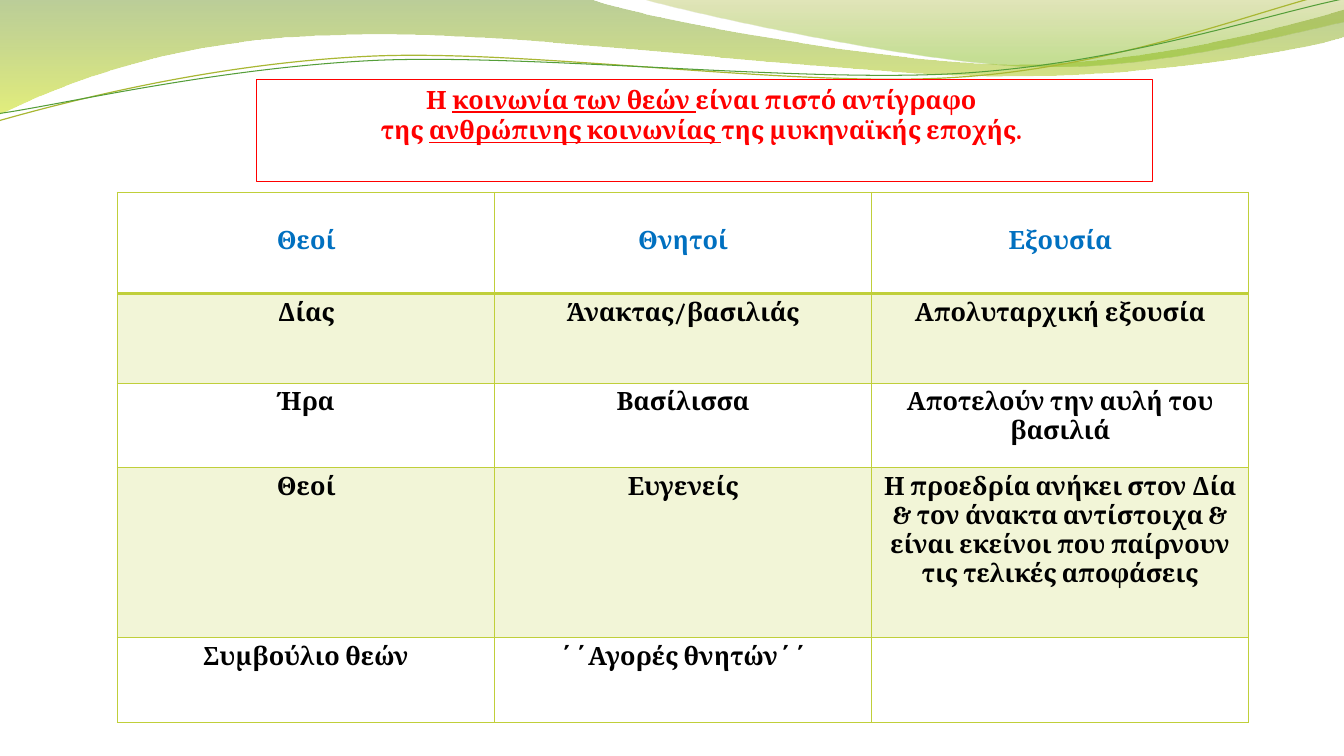
from dataclasses import dataclass
from typing import Optional

from lxml import etree
from pptx import Presentation
from pptx.dml.color import RGBColor
from pptx.enum.shapes import MSO_SHAPE
from pptx.enum.text import MSO_ANCHOR, PP_ALIGN
from pptx.oxml.ns import qn
from pptx.util import Pt

RECT = MSO_SHAPE.RECTANGLE
TOP = MSO_ANCHOR.TOP
CENTER = PP_ALIGN.CENTER
BLANK_LAYOUT = 6
WAVE_SHIFT = 0.5


@dataclass(frozen=True)
class Theme:
    font: str = "Cambria"
    size: float = 18
    title: str = "FF0000"
    header: str = "0070C0"
    body: str = "000000"
    grid: str = "C0CF3A"
    band_alpha: int = 20
    olive_line: str = "A9B733"
    green_line: str = "549E39"


@dataclass(frozen=True)
class Stop:
    position: float
    color: str
    alpha: int


@dataclass(frozen=True)
class Wave:
    """Segments hold one point for a line, three for a Bézier curve."""
    start: tuple
    segments: tuple
    stops: tuple = ()
    line: Optional[str] = None
    width: float = 0


@dataclass(frozen=True)
class Row:
    height: float
    texts: tuple
    header: bool = False
    band: bool = False


THEME = Theme()

WAVES = (
    Wave((-0.4, -0.7), (
        ((422.6, -0.7),),
        ((456.5, 12.2), (636.5, 45.4), (727.9, 45.4)),
        ((818.6, 45.4), (919.4, 18.7), (960, 6.5)),
        ((960.5, 25.9),),
        ((943.9, 31.7), (834.5, 54.7), (715.7, 54)),
        ((596.9, 54), (366.5, 20.2), (247, 24.5)),
        ((123.8, 25.9), (43.9, 59.8), (-1.4, 81.4)),
    ), stops=(Stop(0, "69921C", 45), Stop(1, "CCE10F", 55))),
    Wave((459.4, -0.7), (
        ((488.9, 7.9), (654.5, 44.6), (738, 46.8)),
        ((820.8, 49.7), (923, 23), (960, 15.1)),
        ((960, -0.5),),
    ), stops=(Stop(0, "9BAA1A", 30), Stop(0.8, "81BA16", 45))),
    Wave((-0.7, 85.7), (
        ((45.4, 72.7), (151.2, 44.6), (265.7, 39.6)),
        ((379.4, 34.6), (568.1, 62.6), (683.3, 54.7)),
        ((799.2, 47.5), (900.7, 5.8), (957.6, -7.2)),
    ), line=THEME.olive_line, width=0.85),
    Wave((-0.7, 80.6), (
        ((44.6, 74.2), (157, 47.5), (271.4, 42.5)),
        ((386.6, 38.2), (573.1, 59), (687.6, 51.8)),
        ((802.1, 44.6), (903.6, 10.1), (960, -1.4)),
    ), line=THEME.green_line, width=0.75),
)

# Each title line is a group of (text, underlined) runs
TITLE = (
    (("Η ", False), ("κοινωνία των θεών ", True), ("είναι πιστό αντίγραφο ", False)),
    (("της ", False), ("ανθρώπινης κοινωνίας ", True), ("της μυκηναϊκής εποχής. ", False)),
)

ROWS = (
    Row(72.1, ("Θεοί", "Θνητοί", "Εξουσία"), header=True),
    Row(64.1, ("Δίας", "Άνακτας/βασιλιάς", "Απολυταρχική εξουσία"), band=True),
    Row(60.4, ("Ήρα", "Βασίλισσα", "Αποτελούν την αυλή του βασιλιά")),
    Row(121.6, ("Θεοί", "Ευγενείς",
                "Η προεδρία ανήκει στον Δία & τον άνακτα αντίστοιχα & είναι "
                "εκείνοι που παίρνουν τις τελικές αποφάσεις"), band=True),
    Row(60.4, ("Συμβούλιο θεών", "΄΄Αγορές θνητών΄΄", "")),
)


def set_alpha(color_element, percent: int) -> None:
    etree.SubElement(color_element, qn("a:alpha")).set("val", str(percent * 1000))


def format_font(font, color: str, underline: Optional[bool] = None) -> None:
    formats = {"name": THEME.font, "size": Pt(THEME.size), "bold": True,
               "underline": underline}
    for name, value in formats.items():
        setattr(font, name, value)
    font.color.rgb = RGBColor.from_string(color)


def bend_segments(sp, segments: tuple) -> None:
    """Merge the three line steps of each curved segment into one Bézier."""
    steps = iter(list(sp.element.spPr.iter(qn("a:lnTo"))))
    for segment in segments:
        first, *others = [next(steps) for _ in segment]
        if others:
            first.tag = qn("a:cubicBezTo")
        for step in others:
            first.append(step[0])
            step.getparent().remove(step)


def draw_wave(s, wave: Wave) -> None:
    points = [wave.start] + [point for segment in wave.segments for point in segment]
    corners = [(Pt(x), Pt(y + WAVE_SHIFT)) for x, y in points]
    builder = s.shapes.build_freeform(*corners[0])
    builder.add_line_segments(corners[1:], close=bool(wave.stops))
    sp = builder.convert_to_shape()
    bend_segments(sp, wave.segments)
    sp.shadow.inherit = False
    if wave.stops:
        sp.line.fill.background()
        sp.fill.gradient()
        sp.fill.gradient_angle = 270
        for gradient_stop, stop in zip(sp.fill.gradient_stops, wave.stops):
            gradient_stop.position = stop.position
            gradient_stop.color.rgb = RGBColor.from_string(stop.color)
        for color, stop in zip(sp.element.spPr.iter(qn("a:srgbClr")), wave.stops):
            set_alpha(color, stop.alpha)
    else:
        sp.fill.background()
        sp.line.color.rgb = RGBColor.from_string(wave.line)
        sp.line.width = Pt(wave.width)


def draw_title(s) -> None:
    sp = s.shapes.add_shape(RECT, Pt(183), Pt(56.7), Pt(640), Pt(72.7))
    sp.shadow.inherit = False
    sp.fill.background()
    sp.line.color.rgb = RGBColor.from_string(THEME.title)
    sp.line.width = Pt(0.75)
    tf = sp.text_frame
    tf.word_wrap = True
    tf.vertical_anchor = TOP
    for index, runs in enumerate(TITLE):
        p = tf.add_paragraph() if index else tf.paragraphs[0]
        p.alignment = CENTER
        for text, underline in runs:
            r = p.add_run()
            r.text = text
            format_font(r.font, THEME.title, underline)


def set_border(cell, side: str, width: float) -> None:
    tc_pr = cell._tc.get_or_add_tcPr()
    line = etree.SubElement(tc_pr, qn(f"a:ln{side}"), w=str(Pt(width)))
    fill = etree.SubElement(line, qn("a:solidFill"))
    etree.SubElement(fill, qn("a:srgbClr"), val=THEME.grid)


def draw_cell(cell, row: Row, text: str, below_header: bool) -> None:
    # Borders come before the fill in the cell properties
    widths = {"L": 1, "R": 1, "T": 2 if below_header else 1, "B": 2 if row.header else 1}
    for side, width in widths.items():
        set_border(cell, side, width)
    if row.band:
        cell.fill.solid()
        cell.fill.fore_color.rgb = RGBColor.from_string(THEME.grid)
        set_alpha(cell._tc.tcPr.find(f"{qn('a:solidFill')}/{qn('a:srgbClr')}"),
                  THEME.band_alpha)
    else:
        cell.fill.background()
    if row.header:
        cell.margin_top = Pt(24.6)
    if text:
        p = cell.text_frame.paragraphs[0]
        p.alignment = CENTER
        r = p.add_run()
        r.text = text
        format_font(r.font, THEME.header if row.header else THEME.body)


def draw_table(s) -> None:
    height = sum(row.height for row in ROWS)
    columns = len(ROWS[0].texts)
    table = s.shapes.add_table(len(ROWS), columns, Pt(84), Pt(137.5),
                               Pt(807.9), Pt(height)).table
    table.first_row = table.horz_banding = False
    for i, row in enumerate(ROWS):
        table.rows[i].height = Pt(row.height)
        for j, text in enumerate(row.texts):
            draw_cell(table.cell(i, j), row, text, i == 1)


def main() -> None:
    prs = Presentation()
    prs.slide_width, prs.slide_height = Pt(960), Pt(540)
    s = prs.slides.add_slide(prs.slide_layouts[BLANK_LAYOUT])
    # Green waves along the top edge
    for wave in WAVES:
        draw_wave(s, wave)
    # Framed statement and comparison table
    draw_title(s)
    draw_table(s)
    prs.save("out.pptx")


if __name__ == "__main__":
    main()
